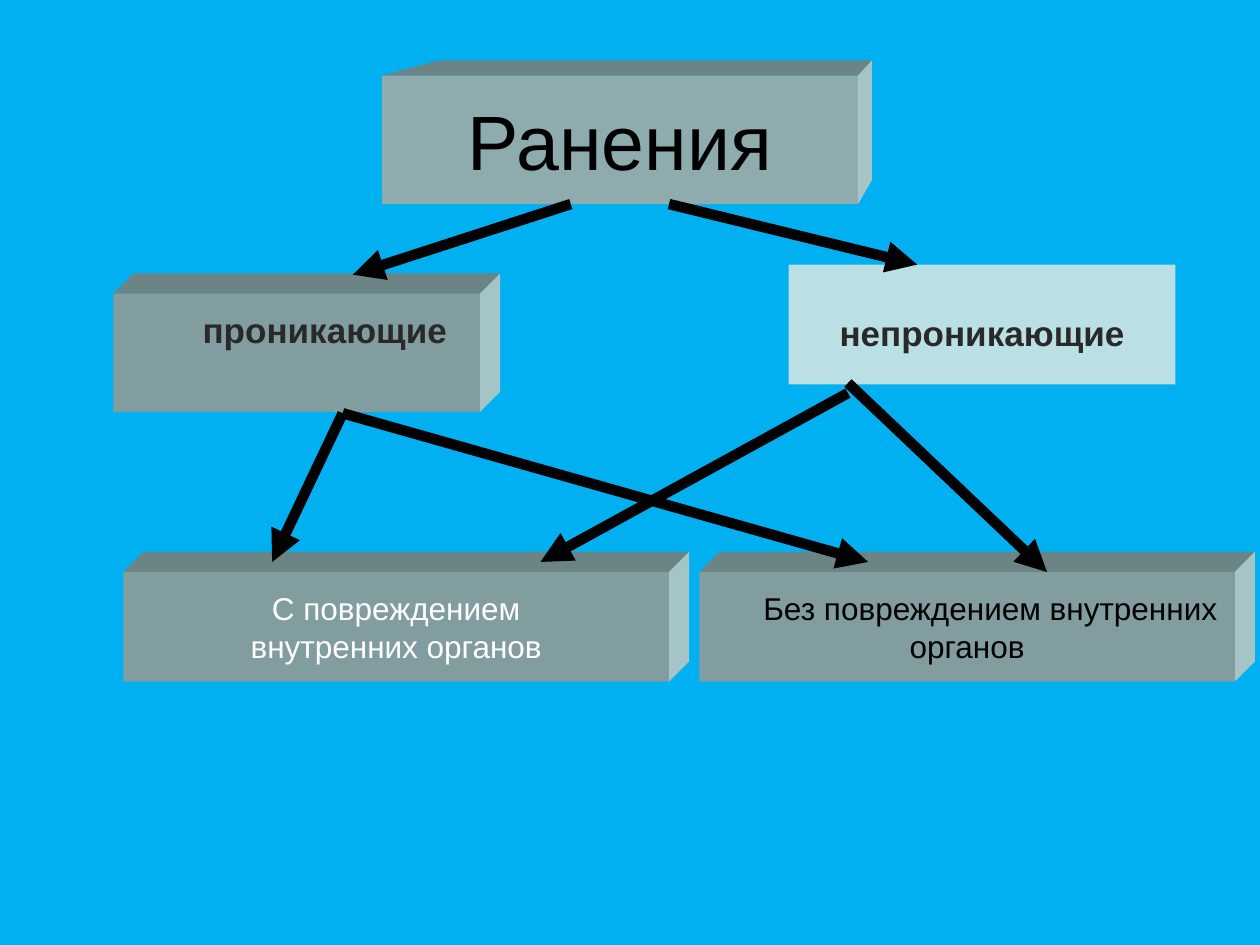
from dataclasses import dataclass
from typing import NamedTuple

from lxml import etree
from pptx import Presentation, util as u
from pptx.dml.color import RGBColor
from pptx.enum import shapes as sh, text as tx
from pptx.oxml import ns

# One grid cell is a tenth of an inch.
COLS, ROWS = 100, 75
CELL = u.Inches(0.1)


@dataclass(frozen=True)
class Theme:
    font: str = "Arial"
    back: str = "00B0F0"
    pale: str = "BBE0E3"
    front: str = "829D9F"
    head: str = "8EABAE"
    top: str = "6B8485"
    side: str = "A4C4C6"
    dark: str = "292929"
    black: str = "000000"
    white: str = "FFFFFF"
    title: int = 44
    kind: int = 20
    note: int = 18
    line: int = 6


class Area(NamedTuple):
    x: float
    y: float
    w: float
    h: float


class Depth(NamedTuple):
    """Offset of the back edge, and how far its two ends are cut in."""
    dx: float
    dy: float
    left: float
    low: float


class Block(NamedTuple):
    area: Area
    fill: str
    depth: Depth | None = None
    lines: tuple[str, ...] = ()
    size: int = 0
    color: str = ""
    bold: bool = False
    inset: float = 0     # space above the text; 0 puts it in the middle
    indent: float = 0    # left indent of the first line


class Arrow(NamedTuple):
    start: tuple[float, float]
    end: tuple[float, float]


T = Theme()
FLAT = Depth(1.6, 1.6, 1.6, -1.6)
SKEW = Depth(1.1, 1.2, 4.5, -1.9)

BLOCKS = (
    Block(Area(9, 23.3, 29.1, 9.4), T.front, FLAT),
    Block(Area(62.6, 21, 30.7, 9.5), T.pale, None, ("непроникающие",),
          T.kind, T.dark, True, inset=3.7),
    Block(Area(9.8, 45.4, 43.3, 8.7), T.front, FLAT,
          ("С повреждением", "внутренних органов"), T.note, T.white),
    Block(Area(55.5, 45.4, 42.5, 8.7), T.front, FLAT,
          ("Без повреждением внутренних", "органов"), T.note, T.black,
          indent=3.7),
    Block(Area(30.3, 6, 37.8, 10.2), T.head, SKEW, ("Ранения",),
          T.title, T.black),
)
LABEL = Area(15.1, 24, 21.4, 4.3)

FORK = (27.2, 32.8)
ARROWS = (
    Arrow(FORK, (21.6, 44.6)),
    Arrow(FORK, (68.9, 44.6)),
    Arrow((67.3, 31.2), (42.9, 44.6)),
    Arrow((67.3, 30.4), (83.1, 45.4)),
    Arrow((45.3, 16.2), (28, 21.8)),
    Arrow((53.1, 16.2), (72.8, 21)),
)


def cells(*nums: float) -> list[int]:
    return [round(n * CELL) for n in nums]


def paint(shape, color: str) -> None:
    shape.shadow.inherit = False
    shape.fill.solid()
    shape.fill.fore_color.rgb = RGBColor.from_string(color)
    shape.line.fill.background()


def write(para, words: str, size: int, color: str, bold: bool) -> None:
    run = para.add_run()
    run.text = words
    font = run.font
    font.name, font.size, font.bold = T.font, u.Pt(size), bold
    font.color.rgb = RGBColor.from_string(color)


def face(slide, points: list[tuple[float, float]], color: str) -> None:
    first, *rest = [tuple(cells(*p)) for p in points]
    form = slide.shapes.build_freeform(*first)
    form.add_line_segments(rest, close=True)
    paint(form.convert_to_shape(), color)


def extrude(slide, area: Area, depth: Depth) -> None:
    """Draw the top and right faces behind a block's front."""
    x, y, w, h = area
    right, low = x + w, y + h
    peak = (right + depth.dx, y - depth.dy)
    face(slide, [(x, y), (x + depth.left, peak[1]), peak, (right, y)], T.top)
    face(slide, [(right, y), peak, (peak[0], low + depth.low), (right, low)],
         T.side)


def draw(slide, block: Block) -> None:
    area = block.area
    if block.depth:
        # The title's listed area includes its bevel; the others are fronts.
        if block.depth is SKEW:
            area = Area(area.x, area.y, area.w, area.h)
            area = Area(area.x, area.y, area.w, area.h)
        extrude(slide, area, block.depth)
    box = slide.shapes.add_shape(sh.MSO_SHAPE.RECTANGLE, *cells(*area))
    paint(box, block.fill)
    frame = box.text_frame
    frame.word_wrap = True
    frame.margin_left = frame.margin_right = frame.margin_bottom = 0
    frame.margin_top = cells(block.inset)[0]
    frame.vertical_anchor = (tx.MSO_ANCHOR.TOP if block.inset
                             else tx.MSO_ANCHOR.MIDDLE)
    for i, words in enumerate(block.lines):
        para = frame.add_paragraph() if i else frame.paragraphs[0]
        para.alignment = tx.PP_ALIGN.CENTER
        if block.indent and not i:
            para._p.get_or_add_pPr().set("marL", str(cells(block.indent)[0]))
        write(para, words, block.size, block.color, block.bold)


def link(slide, arrow: Arrow) -> None:
    line = slide.shapes.add_connector(
        sh.MSO_CONNECTOR.STRAIGHT, *cells(*arrow.start, *arrow.end))
    line.line.width = u.Pt(T.line)
    line.line.color.rgb = RGBColor.from_string(T.black)
    etree.SubElement(line.line._get_or_add_ln(), ns.qn("a:tailEnd"),
                     type="triangle")
    etree.SubElement(line._element.spPr, ns.qn("a:effectLst"))


def main() -> None:
    deck = Presentation()
    deck.slide_width, deck.slide_height = cells(COLS, ROWS)
    slide = deck.slides.add_slide(deck.slide_layouts[6])
    back = slide.background.fill
    back.solid()
    back.fore_color.rgb = RGBColor.from_string(T.back)
    for block in BLOCKS:
        draw(slide, block)
    label = slide.shapes.add_textbox(*cells(*LABEL)).text_frame
    label.word_wrap = False
    write(label.paragraphs[0], "проникающие", T.kind, T.dark, True)
    for arrow in ARROWS:
        link(slide, arrow)
    deck.save("out.pptx")


if __name__ == "__main__":
    main()
